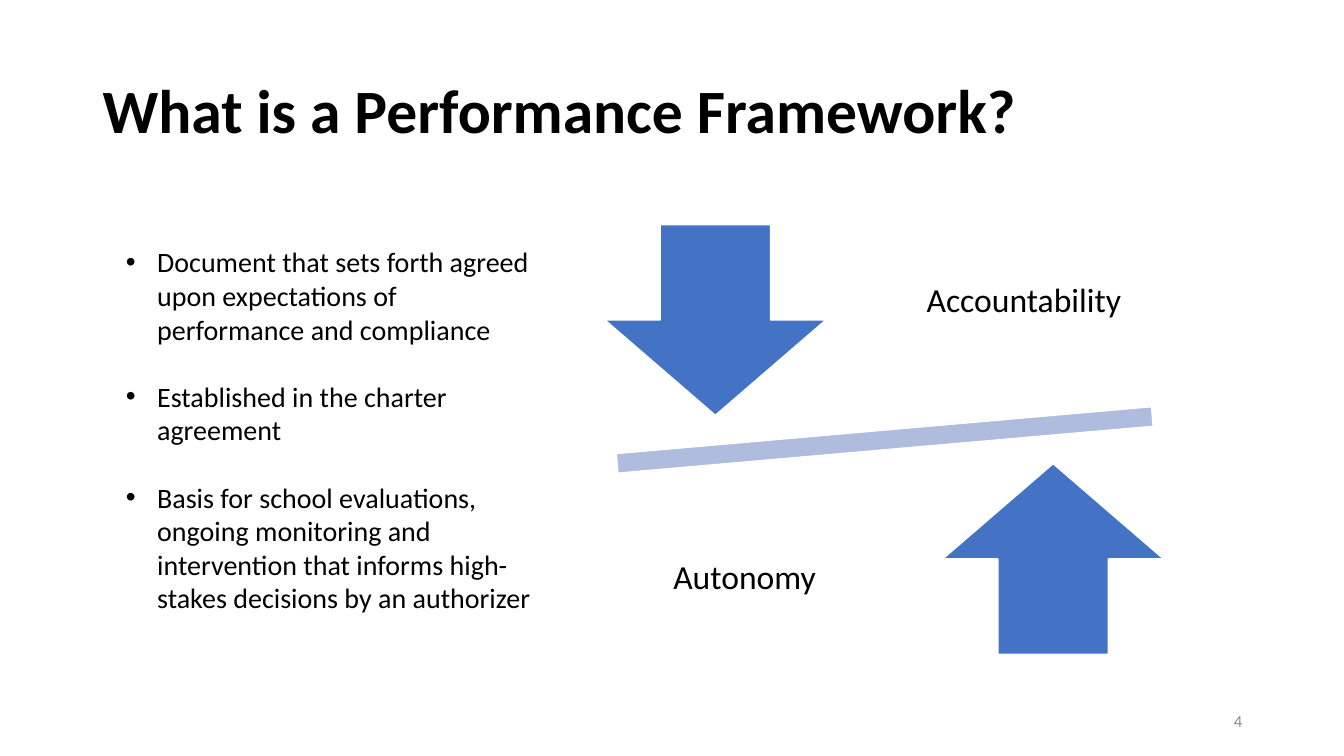
import pptx
import pptx.dml.color
import pptx.enum.shapes
import pptx.enum.text
import pptx.oxml.ns
import pptx.util
from lxml import etree

Inches = pptx.util.Inches
Pt = pptx.util.Pt
RGBColor = pptx.dml.color.RGBColor
Shape = pptx.enum.shapes.MSO_SHAPE
Align = pptx.enum.text.PP_ALIGN
Anchor = pptx.enum.text.MSO_ANCHOR

BLACK = RGBColor(0x00, 0x00, 0x00)
WHITE = RGBColor(0xFF, 0xFF, 0xFF)
GRAY = RGBColor(0x8C, 0x8C, 0x8C)
BLUE = RGBColor(0x44, 0x72, 0xC4)
PALE_BLUE = RGBColor(0xB0, 0xBC, 0xDE)

FRAMEWORK_POINTS = [
    "Document that sets forth agreed upon expectations of performance and compliance",
    "Established in the charter agreement",
    "Basis for school evaluations, ongoing monitoring and intervention that informs "
    "high-stakes decisions by an authorizer",
]


class SlideBuilder:
    font_name = "Calibri"
    bullet_indent = Inches(0.31)

    def __init__(self, slide):
        self.slide = slide

    def add_text(self, box, lines, size, color=BLACK, bold=False, align=Align.LEFT,
                 anchor=Anchor.MIDDLE, line_spacing=None, gap=0):
        """Add one paragraph per line, with a gap in points between them."""
        shape = self.slide.shapes.add_textbox(*map(Inches, box))
        frame = shape.text_frame
        frame.word_wrap = True
        frame.vertical_anchor = anchor
        for index, line in enumerate(lines):
            paragraph = frame.paragraphs[0] if index == 0 else frame.add_paragraph()
            paragraph.text = line
            paragraph.alignment = align
            paragraph.line_spacing = line_spacing
            paragraph.space_before = Pt(gap if index else 0)
            paragraph.font.name = self.font_name
            paragraph.font.size = Pt(size)
            paragraph.font.bold = bold
            paragraph.font.color.rgb = color
        return shape

    def add_bullets(self, box, lines, size, gap):
        shape = self.add_text(box, lines, size, anchor=Anchor.TOP, gap=gap)
        for paragraph in shape.text_frame.paragraphs:
            properties = paragraph._p.get_or_add_pPr()
            properties.set("marL", str(self.bullet_indent))
            properties.set("indent", str(-self.bullet_indent))
            bullet_font = pptx.oxml.ns.qn("a:buFont")
            bullet = pptx.oxml.ns.qn("a:buChar")
            # Bullet elements must precede the default run properties.
            default_run = properties.find(pptx.oxml.ns.qn("a:defRPr"))
            default_run.addprevious(etree.Element(bullet_font, typeface="Arial"))
            default_run.addprevious(etree.Element(bullet, char="•"))

    def add_shape(self, kind, box, color, rotation=0):
        shape = self.slide.shapes.add_shape(kind, *map(Inches, box))
        shape.shadow.inherit = False
        shape.rotation = rotation
        shape.fill.solid()
        shape.fill.fore_color.rgb = color
        shape.line.color.rgb = WHITE
        shape.line.width = Pt(1)

    def add_side(self, arrow, arrow_left, arrow_top, label, label_left, label_top):
        """Add one side of the balance: an arrow and its label."""
        self.add_shape(arrow, (arrow_left, arrow_top, 2.19, 1.89), BLUE)
        self.add_text((label_left, label_top, 2.33, 1.99), [label], 24,
                      align=Align.CENTER, line_spacing=0.9)


def main():
    presentation = pptx.Presentation()
    presentation.slide_width = Inches(13.33)
    presentation.slide_height = Inches(7.5)
    builder = SlideBuilder(presentation.slides.add_slide(presentation.slide_layouts[6]))

    builder.add_text((0.92, 0.4, 11.5, 1.45), ["What is a Performance Framework?"], 44,
                     bold=True, line_spacing=0.9)
    builder.add_shape(Shape.MATH_MINUS, (5.15, 3.95, 7.25, 0.83), PALE_BLUE, rotation=355)
    builder.add_side(Shape.DOWN_ARROW, 6, 2.23, "Accountability", 8.99, 2)
    builder.add_side(Shape.UP_ARROW, 9.35, 4.6, "Autonomy", 6.22, 4.74)
    builder.add_text((9.42, 6.95, 3, 0.4), ["4"], 12, color=GRAY, align=Align.RIGHT)
    builder.add_bullets((1.15, 2.38, 4.25, 3.8), FRAMEWORK_POINTS, 20, gap=24)

    presentation.save("out.pptx")


if __name__ == "__main__":
    main()
